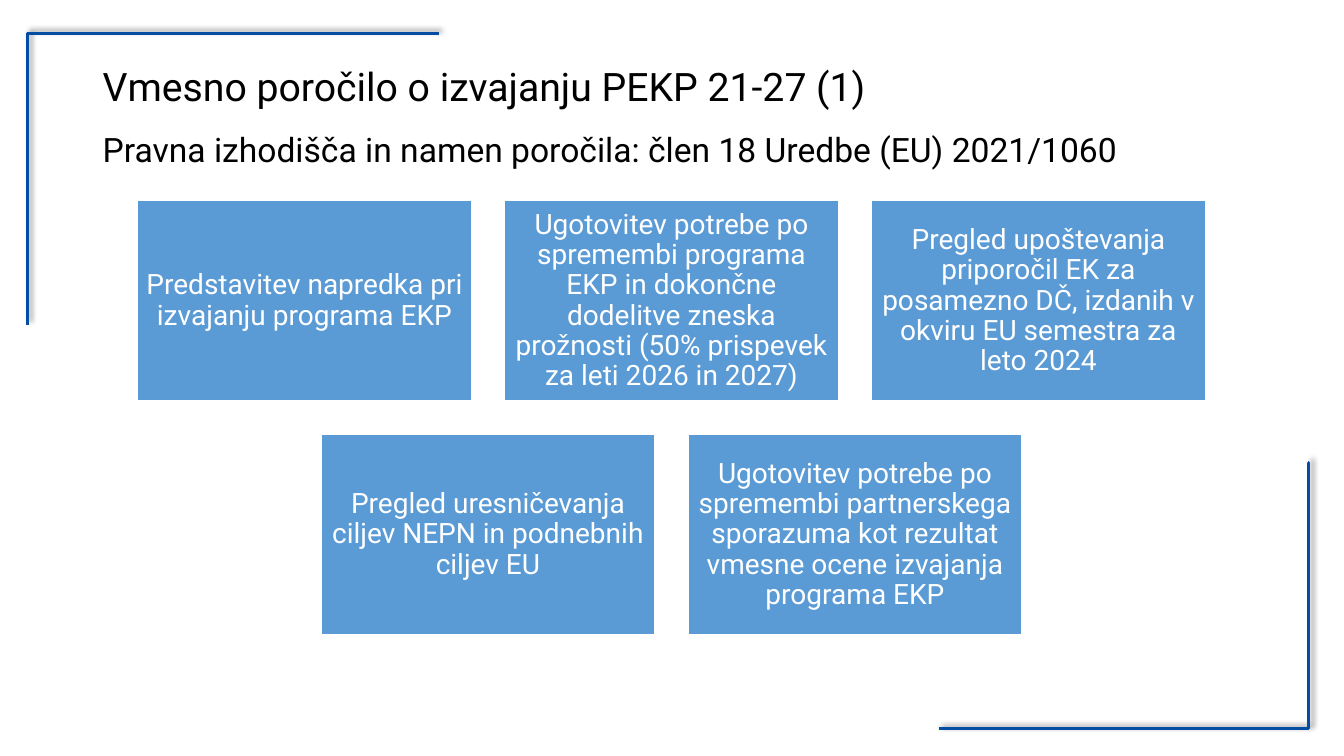
from lxml import etree
from pptx import Presentation
from pptx.dml.color import RGBColor
from pptx.enum.shapes import MSO_CONNECTOR, MSO_SHAPE
from pptx.enum.text import MSO_ANCHOR as ANCHOR, PP_ALIGN as ALIGN
from pptx.oxml import parse_xml
from pptx.oxml.ns import nsdecls, qn
from pptx.util import Inches, Pt

SHADOW = (
    f'<a:effectLst {nsdecls("a")}>'
    '<a:outerShdw blurRad="50800" dist="38100" dir="18900000" algn="bl" rotWithShape="0">'
    '<a:srgbClr val="000000"><a:alpha val="40000"/></a:srgbClr>'
    '</a:outerShdw></a:effectLst>'
)


def rgb(value):
    return RGBColor.from_string(value)


def write(tf, text, size, color, align):
    tf.word_wrap = True
    p = tf.paragraphs[0]
    p.alignment = align
    p.line_spacing = 0.9
    r = p.add_run()
    r.text = text
    for name, value in {"name": "Roboto", "size": Pt(size)}.items():
        setattr(r.font, name, value)
    r.font.color.rgb = rgb(color)


prs = Presentation()
prs.slide_width, prs.slide_height = Inches(13.33), Inches(7.5)
slide = prs.slides.add_slide(prs.slide_layouts[6])

# Corner brackets: start, end and position of the bend
brackets = [
    (0.27, 3.22, 4.35, 0.33, 0),
    (9.31, 7.23, 12.97, 4.59, 100300),
]
for *ends, bend in brackets:
    s = slide.shapes.add_connector(MSO_CONNECTOR.ELBOW, *map(Inches, ends))
    s.line.color.rgb = rgb("034EA2")
    s.line.width = Pt(2.25)
    spPr = s._element.spPr
    guides = spPr.find(qn("a:prstGeom")).find(qn("a:avLst"))
    etree.SubElement(guides, qn("a:gd"), name="adj1", fmla=f"val {bend}")
    spPr.append(parse_xml(SHADOW))

# Boxes, each row centred on the same axis
CENTER, STEP = 6.66, 3.64
BOX_W, BOX_H = 3.31, 1.99
rows = [
    (1.99, [
        "Predstavitev napredka pri izvajanju programa EKP",
        "Ugotovitev potrebe po spremembi programa EKP in dokončne dodelitve "
        "zneska prožnosti (50% prispevek za leti 2026 in 2027)",
        "Pregled upoštevanja priporočil EK za posamezno DČ, izdanih v okviru "
        "EU semestra za leto 2024",
    ]),
    (4.31, [
        "Pregled uresničevanja ciljev NEPN in podnebnih ciljev EU",
        "Ugotovitev potrebe po spremembi partnerskega sporazuma kot rezultat "
        "vmesne ocene izvajanja programa EKP",
    ]),
]
for top, texts in rows:
    left = CENTER - (STEP * (len(texts) - 1) + BOX_W) / 2
    for i, text in enumerate(texts):
        s = slide.shapes.add_shape(
            MSO_SHAPE.RECTANGLE,
            Inches(left + i * STEP), Inches(top), Inches(BOX_W), Inches(BOX_H))
        s.shadow.inherit = False
        s.fill.solid()
        s.fill.fore_color.rgb = rgb("5B9BD5")
        s.line.color.rgb = rgb("FFFFFF")
        s.line.width = Pt(1)
        tf = s.text_frame
        tf.vertical_anchor = ANCHOR.MIDDLE
        for side in ("left", "right", "top", "bottom"):
            setattr(tf, f"margin_{side}", Inches(0.08))
        write(tf, text, 20, "FFFFFF", ALIGN.CENTER)

# Title and subtitle
headings = [
    (0.62, 28, "Vmesno poročilo o izvajanju PEKP 21-27 (1)"),
    (1.27, 24, "Pravna izhodišča in namen poročila: člen 18 Uredbe (EU) 2021/1060"),
]
for top, size, text in headings:
    s = slide.shapes.add_textbox(Inches(0.92), Inches(top), Inches(11.5), Inches(0.72))
    write(s.text_frame, text, size, "000000", ALIGN.LEFT)

prs.save("out.pptx")
